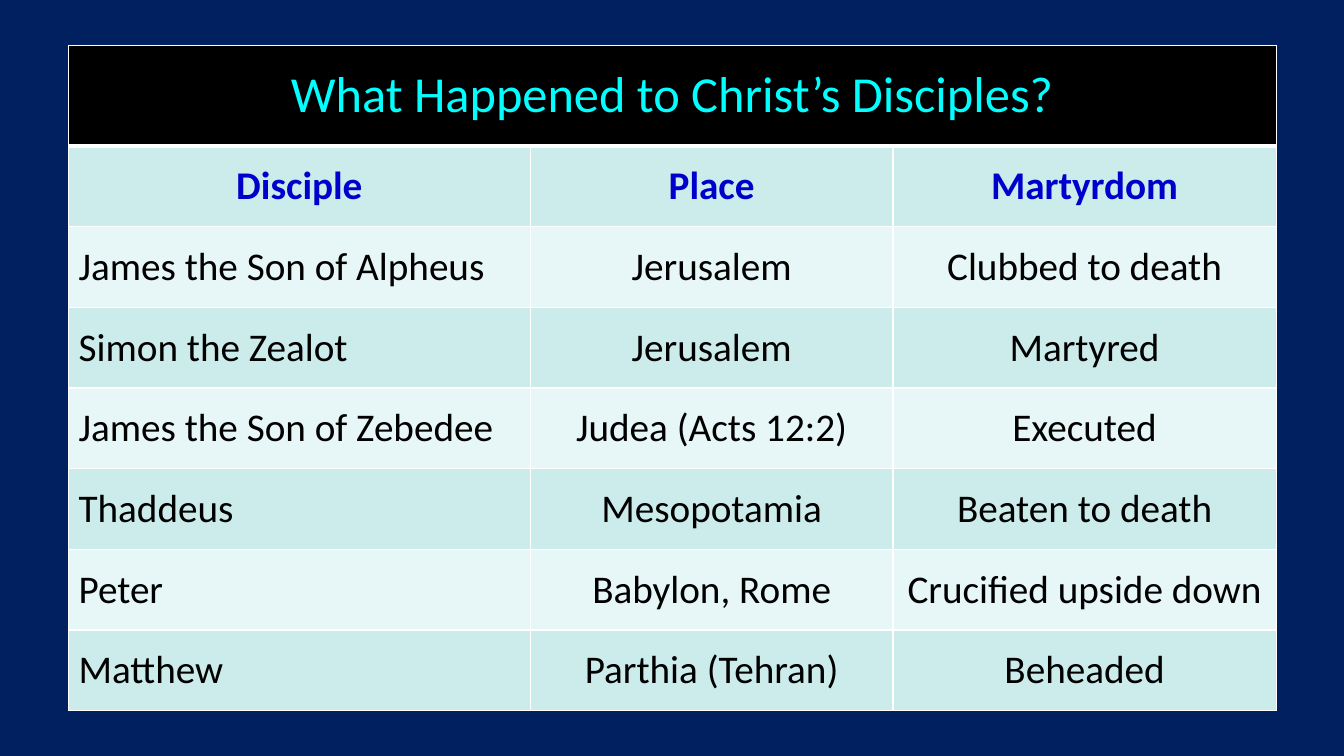
from lxml.etree import SubElement
from pptx import Presentation
from pptx.dml.color import RGBColor
from pptx.enum.text import MSO_ANCHOR as Anchor, PP_ALIGN as Align
from pptx.oxml.ns import qn
from pptx.util import Pt

COLORS = {
    "background": "002060",
    "title_fill": "000000",
    "title_text": "00FFFF",
    "heading_text": "0000CC",
    "body_text": "000000",
    "dark_band": "CCECEC",
    "light_band": "E7F6F6",
    "border": "FFFFFF",
}
FONT = "Calibri"
TITLE = "What Happened to Christ’s Disciples?"
ROWS = [
    ("Disciple", "Place", "Martyrdom"),
    ("James the Son of Alpheus", "Jerusalem", "Clubbed to death"),
    ("Simon the Zealot", "Jerusalem", "Martyred"),
    ("James the Son of Zebedee", "Judea (Acts 12:2)", "Executed"),
    ("Thaddeus", "Mesopotamia", "Beaten to death"),
    ("Peter", "Babylon, Rome", "Crucified upside down"),
    ("Matthew", "Parthia (Tehran)", "Beheaded"),
]
COLUMN_WIDTHS = (329.76, 259.2, 273.6)
TITLE_HEIGHT, ROW_HEIGHT = 72, 57.6


def color(name):
    return RGBColor.from_string(COLORS[name])


def set_borders(cell, top=1, bottom=1):
    properties = cell._tc.get_or_add_tcPr()
    for side, width in (("L", 1), ("R", 1), ("T", top), ("B", bottom)):
        line = SubElement(properties, qn(f"a:ln{side}"), w=str(Pt(width)))
        fill = SubElement(line, qn("a:solidFill"))
        SubElement(fill, qn("a:srgbClr"), val=COLORS["border"])


def style_cell(cell, fill_name):
    cell.fill.solid()
    cell.fill.fore_color.rgb = color(fill_name)
    cell.vertical_anchor = Anchor.MIDDLE


def write_cell(cell, text, size, text_color, bold=False, align=Align.CENTER):
    cell.text_frame.text = text
    paragraph = cell.text_frame.paragraphs[0]
    paragraph.alignment = align
    font = paragraph.runs[0].font
    font.name, font.size, font.bold = FONT, Pt(size), bold
    font.color.rgb = color(text_color)


def add_disciples_table(slide):
    height = TITLE_HEIGHT + ROW_HEIGHT * len(ROWS)
    frame = slide.shapes.add_table(len(ROWS) + 1, len(COLUMN_WIDTHS), Pt(48.96), Pt(32.4),
                                   Pt(sum(COLUMN_WIDTHS)), Pt(height))
    table = frame.table
    for column, width in zip(table.columns, COLUMN_WIDTHS):
        column.width = Pt(width)
    for index, row in enumerate(table.rows):
        row.height = Pt(ROW_HEIGHT if index else TITLE_HEIGHT)
    return table


def fill_title_row(table):
    for cell in table.rows[0].cells:
        set_borders(cell, bottom=3)
        style_cell(cell, "title_fill")
    title_cell = table.cell(0, 0)
    title_cell.merge(table.cell(0, len(COLUMN_WIDTHS) - 1))
    write_cell(title_cell, TITLE, 36, "title_text")


def fill_disciple_rows(table):
    for row_index, texts in enumerate(ROWS, start=1):
        heading = row_index == 1
        for column_index, text in enumerate(texts):
            cell = table.cell(row_index, column_index)
            set_borders(cell, top=3 if heading else 1)
            style_cell(cell, "dark_band" if row_index % 2 else "light_band")
            align = Align.CENTER if heading or column_index else Align.LEFT
            write_cell(cell, text, 28, "heading_text" if heading else "body_text", heading, align)


def main():
    """Build the slide with the table of disciples and save it."""
    presentation = Presentation()
    presentation.slide_width, presentation.slide_height = Pt(960), Pt(540)
    slide = presentation.slides.add_slide(presentation.slide_layouts[6])
    slide.background.fill.solid()
    slide.background.fill.fore_color.rgb = color("background")
    table = add_disciples_table(slide)
    fill_title_row(table)
    fill_disciple_rows(table)
    presentation.save("out.pptx")


if __name__ == "__main__":
    main()
